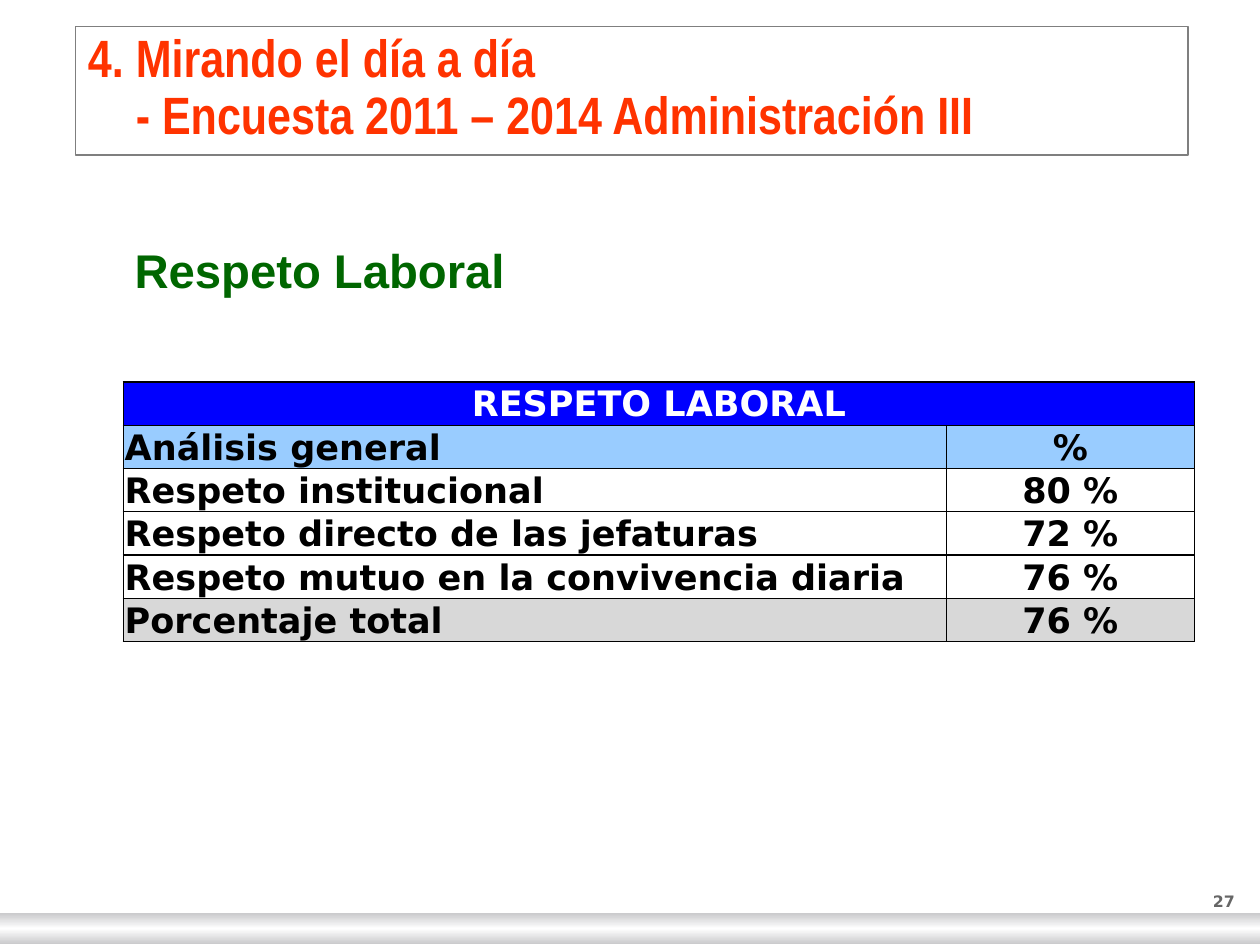
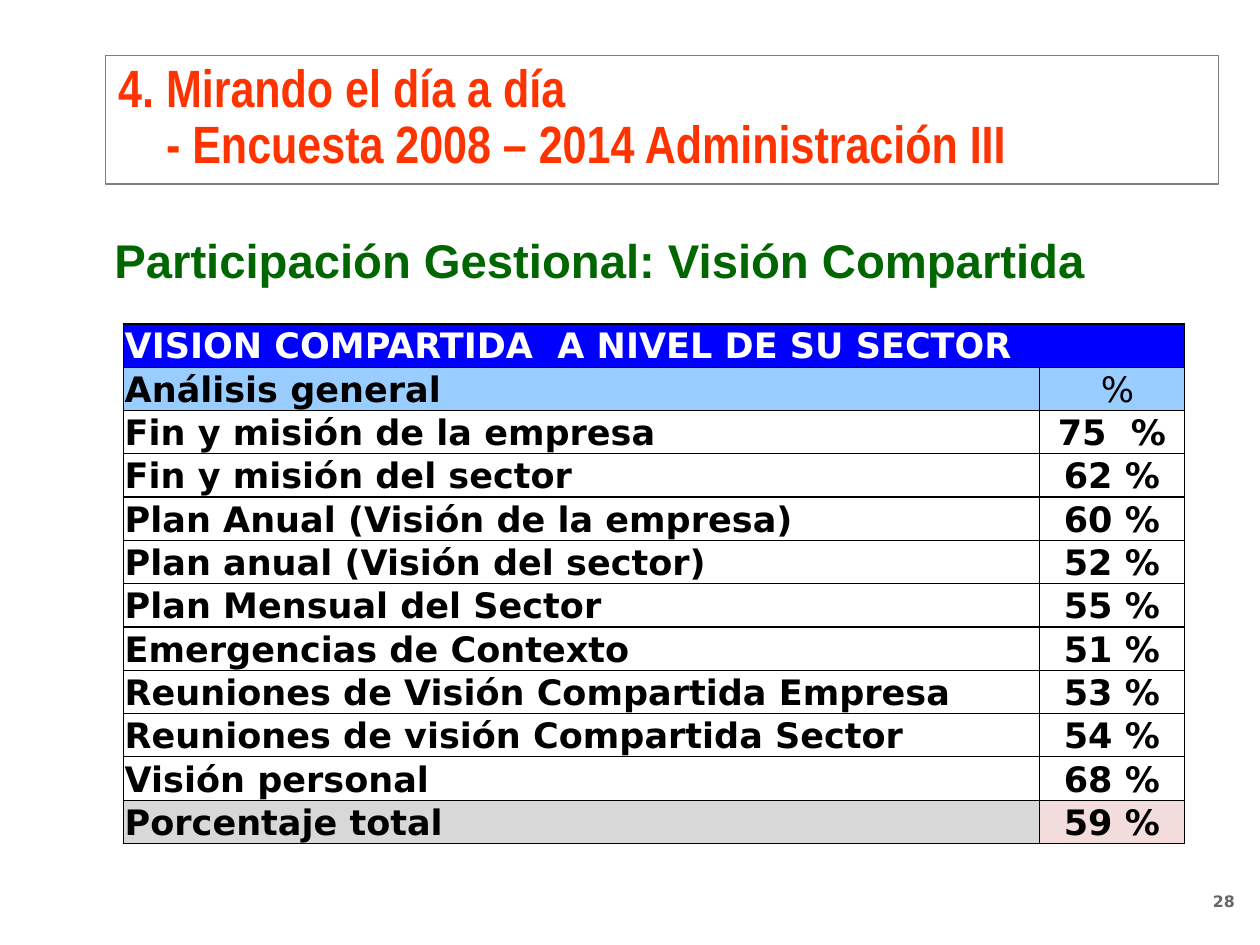
from copy import deepcopy

from lxml.etree import SubElement
from pptx import Presentation
from pptx.dml.color import RGBColor
from pptx.enum.shapes import MSO_SHAPE as SHAPE
from pptx.enum.text import MSO_ANCHOR as ANCHOR, PP_ALIGN as ALIGN
from pptx.oxml.ns import qn
from pptx.util import Inches, Pt

BLACK = RGBColor(0x00, 0x00, 0x00)
WHITE = RGBColor(0xFF, 0xFF, 0xFF)
ORANGE = RGBColor(0xFF, 0x33, 0x00)
GREEN = RGBColor(0x00, 0x66, 0x00)
BLUE = RGBColor(0x00, 0x00, 0xFF)
SKY = RGBColor(0x99, 0xCC, 0xFF)
SILVER = RGBColor(0xD8, 0xD8, 0xD8)
PINK = RGBColor(0xF2, 0xDD, 0xDC)
FRAME = RGBColor(0x7F, 0x7F, 0x7F)
NUMBER_GREY = RGBColor(0x66, 0x66, 0x66)
BAND_GREY = RGBColor(0xCB, 0xCB, 0xCD)

TITLE_FONT = dict(name="Arial Narrow", size=Pt(30), bold=True, color=ORANGE)
HEADING_FONT = dict(name="Arial", size=Pt(27), bold=True, color=GREEN)
CELL_FONT = dict(name="DejaVu Sans", size=Pt(20), bold=True, color=BLACK)
HEADER_FONT = {**CELL_FONT, "color": WHITE}
NUMBER_FONT = dict(name="DejaVu Sans", size=Pt(9), bold=True, color=NUMBER_GREY)

BOX_SIZE = (8.83, 1.02)
ROW_HEIGHT = 0.33
THIN, THICK = Pt(0.75), Pt(1)
CELL_MARGINS = dict(margin_left=Inches(0.01), margin_right=Inches(0.01),
                    margin_top=Inches(0.01), margin_bottom=0)


def set_attrs(obj, values):
    for name, value in values.items():
        setattr(obj, name, value)


def write(p, text, font, **para):
    set_attrs(p, para)
    r = p.add_run()
    r.text = text
    values = dict(font)
    r.font.color.rgb = values.pop("color")
    set_attrs(r.font, values)


def add_text(slide, box, text, font, anchor=ANCHOR.TOP, inset=(0.1, 0.05), **para):
    sp = slide.shapes.add_textbox(*map(Inches, box))
    tf = sp.text_frame
    x, y = map(Inches, inset)
    set_attrs(tf, dict(word_wrap=True, vertical_anchor=anchor, margin_left=x,
                       margin_right=x, margin_top=y, margin_bottom=y))
    write(tf.paragraphs[0], text, font, **para)
    return sp


def add_title(slide, left, top, years):
    sp = add_text(slide, (left, top, *BOX_SIZE), "4. Mirando el día a día",
                  TITLE_FONT, line_spacing=0.9)
    set_attrs(sp.line, dict(width=THIN))
    sp.line.color.rgb = FRAME
    p = sp.text_frame.add_paragraph()
    write(p, f"- Encuesta {years} Administración III", TITLE_FONT, line_spacing=0.9)
    p._p.get_or_add_pPr().set("marL", str(Inches(0.38)))


def add_heading(slide, left, top, text):
    add_text(slide, (left, top, *BOX_SIZE), text, HEADING_FONT,
             ANCHOR.BOTTOM, line_spacing=0.9)


def add_page_number(slide, number):
    add_text(slide, (9.21, 7.08, 0.59, 0.15), str(number), NUMBER_FONT,
             inset=(0, 0), alignment=ALIGN.RIGHT)


def add_band(slide):
    sp = slide.shapes.add_shape(SHAPE.RECTANGLE, 0, Inches(7.25), Inches(10), Inches(0.24))
    sp.shadow.inherit = False
    sp.line.fill.background()
    sp.fill.gradient()
    sp.fill.gradient_angle = 90
    stops = sp._element.spPr.find(".//" + qn("a:gsLst"))
    stops.insert(1, deepcopy(stops[0]))
    for i, (stop, color) in enumerate(zip(sp.fill.gradient_stops,
                                          (BAND_GREY, WHITE, BAND_GREY))):
        stop.position = i / 2
        stop.color.rgb = color


def add_borders(cell, widths):
    tcPr = cell._tc.get_or_add_tcPr()
    for side, width in zip("LRTB", widths):
        ln = SubElement(tcPr, qn(f"a:ln{side}"), w=str(width))
        SubElement(SubElement(ln, qn("a:solidFill")), qn("a:srgbClr"), val=str(BLACK))


def format_cell(cell, widths, fill):
    set_attrs(cell, dict(CELL_MARGINS, vertical_anchor=ANCHOR.BOTTOM))
    add_borders(cell, widths)
    if fill is None:
        cell.fill.background()
    else:
        cell.fill.solid()
        cell.fill.fore_color.rgb = fill


def add_results(slide, top, cols, header, rows, header_align=ALIGN.LEFT,
                percent=("%", True), total_fill=SILVER):
    sign, sign_bold = percent
    body = [("Análisis general", sign), *rows]
    count = len(body) + 1
    frame = slide.shapes.add_table(count, 2, Inches(0.98), Inches(top),
                                   Inches(sum(cols)), Inches(count * ROW_HEIGHT))
    table = frame.table
    set_attrs(table, dict(first_row=False, horz_banding=False))
    for col, width in zip(table.columns, cols):
        col.width = Inches(width)
    fills = {0: (BLUE, BLUE), 1: (SKY, SKY), count - 1: (SILVER, total_fill)}
    for i, row in enumerate(table.rows):
        row.height = Inches(ROW_HEIGHT)
        edge = THICK if i == 0 else THIN
        for j, cell in enumerate(row.cells):
            left = THICK if j == 0 else THIN
            format_cell(cell, (left, edge, edge, THIN), fills.get(i, (None, None))[j])
    table.cell(0, 0).merge(table.cell(0, 1))
    write(table.cell(0, 0).text_frame.paragraphs[0], header, HEADER_FONT,
          alignment=header_align)
    for i, texts in enumerate(body, 1):
        for j, (text, align) in enumerate(zip(texts, (ALIGN.LEFT, ALIGN.CENTER))):
            font = {**CELL_FONT, "bold": sign_bold} if (i, j) == (1, 1) else CELL_FONT
            write(table.cell(i, j).text_frame.paragraphs[0], text, font, alignment=align)


def build_respect(slide):
    add_page_number(slide, 27)
    add_band(slide)
    add_results(slide, 3.03, (6.53, 1.97), "RESPETO LABORAL", [
        ("Respeto institucional", "80 %"),
        ("Respeto directo de las jefaturas", "72 %"),
        ("Respeto mutuo en la convivencia diaria", "76 %"),
        ("Porcentaje total", "76 %"),
    ], header_align=ALIGN.CENTER)
    add_title(slide, 0.6, 0.21, "2011 – 2014")
    add_heading(slide, 0.97, 1.4, "Respeto Laboral")


def build_shared_vision(slide):
    add_page_number(slide, 28)
    add_heading(slide, 0.81, 1.32, "Participación Gestional: Visión Compartida")
    add_results(slide, 2.57, (7.27, 1.15), "VISION COMPARTIDA  A NIVEL DE SU SECTOR", [
        ("Fin y misión de la empresa", "75  %"),
        ("Fin y misión del sector", "62 %"),
        ("Plan Anual (Visión de la empresa)", "60 %"),
        ("Plan anual (Visión del sector)", "52 %"),
        ("Plan Mensual del Sector", "55 %"),
        ("Emergencias de Contexto", "51 %"),
        ("Reuniones de Visión Compartida Empresa", "53 %"),
        ("Reuniones de visión Compartida Sector", "54 %"),
        ("Visión personal", "68 %"),
        ("Porcentaje total", "59 %"),
    ], percent=(" %", False), total_fill=PINK)
    add_title(slide, 0.84, 0.44, "2008 – 2014")


def main():
    prs = Presentation()
    set_attrs(prs, dict(slide_width=Inches(10), slide_height=Inches(7.5)))
    for build in (build_respect, build_shared_vision):
        build(prs.slides.add_slide(prs.slide_layouts[6]))
    prs.save("out.pptx")


if __name__ == "__main__":
    main()
